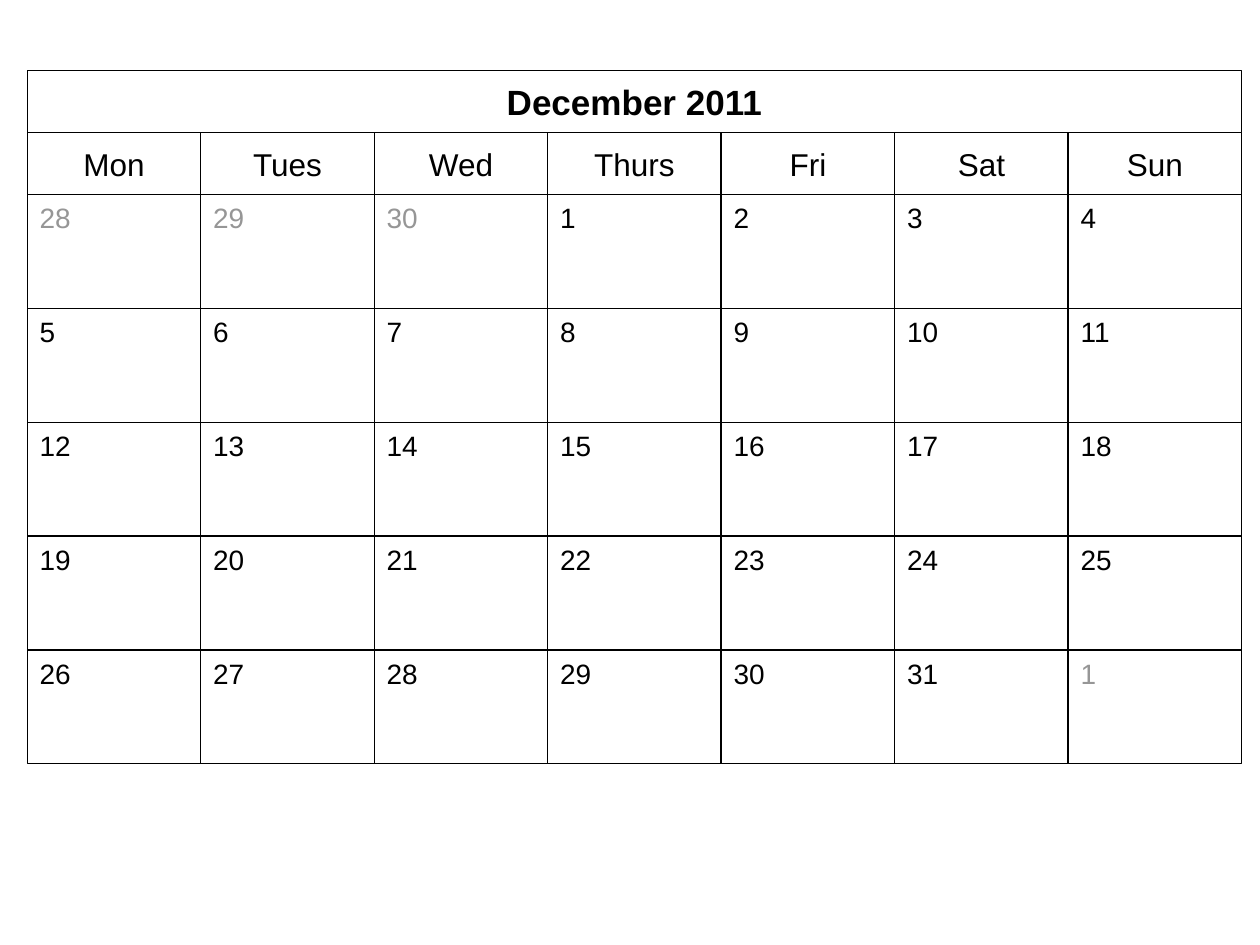
from pptx import Presentation
from pptx import util as u
from pptx.dml.color import RGBColor
from pptx.enum import shapes, text

COLORS = {"paper": "FFFFFF", "ink": "000000", "muted": "969696"}
WEEKDAYS = ["Mon", "Tues", "Wed", "Thurs", "Fri", "Sat", "Sun"]
LEAD_DAYS = [28, 29, 30]
MONTH_DAYS = list(range(1, 32))
TRAIL_DAYS = [1]
HEAD = 1.25


def rgb(name):
    """Return the named colour."""
    return RGBColor.from_string(COLORS[name])


def format_cell(sp, label, size, color="ink", bold=False, header=False):
    """Outline a cell and set its label."""
    sp.line.color.rgb = rgb("ink")
    sp.line.width = u.Pt(0.75)
    tf = sp.text_frame
    tf.text = label
    tf.word_wrap = True
    tf.auto_size = text.MSO_AUTO_SIZE.NONE
    tf.margin_left = tf.margin_right = u.Cm(0.25)
    tf.margin_top = tf.margin_bottom = u.Cm(0.05 if header else 0.13)
    p = tf.paragraphs[0]
    if header:
        sp.fill.solid()
        sp.fill.fore_color.rgb = rgb("paper")
        tf.vertical_anchor = text.MSO_ANCHOR.MIDDLE
        p.alignment = text.PP_ALIGN.CENTER
    else:
        sp.fill.background()
        tf.vertical_anchor = text.MSO_ANCHOR.TOP
        p.alignment = text.PP_ALIGN.LEFT
    p.font.name = "Arial"
    p.font.size = u.Pt(size)
    p.font.bold = bold
    p.font.color.rgb = rgb(color)


def add_cell(s, x, y, w, h, label, size, **style):
    """Add one rectangular calendar cell."""
    sp = s.shapes.add_shape(shapes.MSO_SHAPE.RECTANGLE,
                            u.Cm(x), u.Cm(y), u.Cm(w), u.Cm(h))
    sp.shadow.inherit = False
    format_cell(sp, label, size, **style)


def place_title(s, x, y, w, h):
    """Put the month in the title placeholder."""
    sp = s.shapes.title
    sp.left, sp.top, sp.width, sp.height = (u.Cm(v) for v in (x, y, w, h))
    format_cell(sp, "December 2011", 20, bold=True, header=True)


def add_weekdays(s, x, y, w, h):
    """Add the row of weekday names."""
    col = w / len(WEEKDAYS)
    for i, name in enumerate(WEEKDAYS):
        add_cell(s, x + i * col, y, col, h, name, 18, header=True)


def add_days(s, x, y, w, h):
    """Add the day grid, with days of other months muted."""
    days = ([(d, "muted") for d in LEAD_DAYS]
            + [(d, "ink") for d in MONTH_DAYS]
            + [(d, "muted") for d in TRAIL_DAYS])
    cols = len(WEEKDAYS)
    col, row = w / cols, h / (len(days) // cols)
    for i, (day, color) in enumerate(days):
        week, weekday = divmod(i, cols)
        add_cell(s, x + weekday * col, y + week * row, col, row,
                 str(day), 16, color=color)


def add_calendar(s, x, y, w, h):
    """Stack the title, weekday row and day grid in the box."""
    place_title(s, x, y, w, HEAD)
    add_weekdays(s, x, y + HEAD, w, HEAD)
    add_days(s, x, y + 2 * HEAD, w, h - 2 * HEAD)


def main():
    """Build and save the calendar slide."""
    prs = Presentation()
    prs.slide_width, prs.slide_height = u.Cm(25.4), u.Cm(19.05)
    s = prs.slides.add_slide(prs.slide_layouts[5])
    add_calendar(s, 0.55, 1.42, 24.48, 13.98)
    prs.save("out.pptx")


if __name__ == "__main__":
    main()
